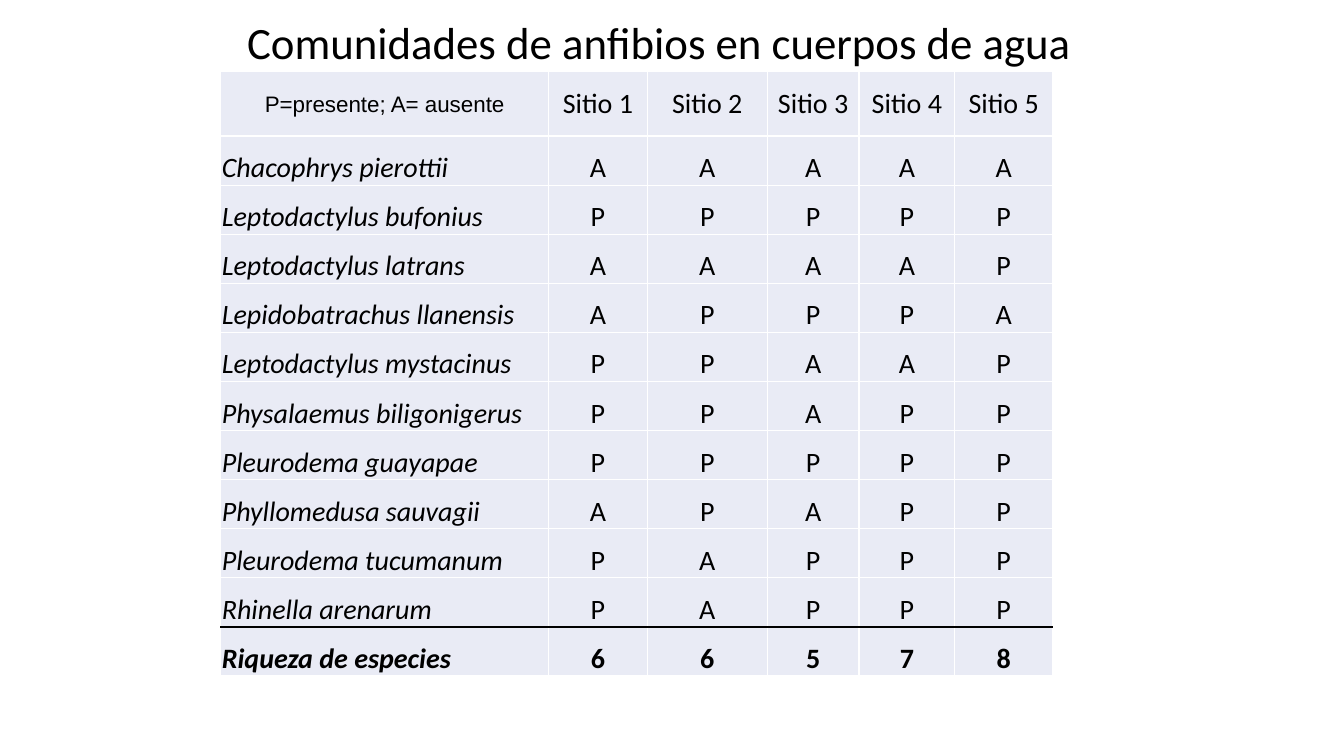
from dataclasses import dataclass

from lxml.etree import SubElement
from pptx import Presentation
from pptx.dml.color import RGBColor as Rgb
from pptx.enum.text import MSO_ANCHOR as Anchor, MSO_AUTO_SIZE as Fit, PP_ALIGN as Align
from pptx.oxml.ns import qn
from pptx.util import Inches, Pt


@dataclass(frozen=True)
class Theme:
    ink: str = "000000"
    rule: str = "FFFFFF"
    fill: str = "E9EBF5"
    face: str = "Calibri"
    key_face: str = "Arial"
    title: int = 32
    body: int = 20
    key: int = 16


THEME = Theme()
TITLE = "Comunidades de anfibios en cuerpos de agua"
KEY = "P=presente; A= ausente"
SITES = [f"Sitio {n}" for n in range(1, 6)]
SPECIES = {
    "Chacophrys pierottii": "AAAAA",
    "Leptodactylus bufonius": "PPPPP",
    "Leptodactylus latrans": "AAAAP",
    "Lepidobatrachus llanensis": "APPPA",
    "Leptodactylus mystacinus": "PPAAP",
    "Physalaemus biligonigerus": "PPAPP",
    "Pleurodema guayapae": "PPPPP",
    "Phyllomedusa sauvagii": "APAPP",
    "Pleurodema tucumanum": "PAPPP",
    "Rhinella arenarum": "PAPPP",
}
TOTAL = ["Riqueza de especies", *"66578"]
WIDTHS = [3.25, 0.98, 1.19, 0.91, 0.95, 0.97]
HEAD = 0.64


def style(para, size, face=THEME.face, bold=False, italic=False):
    font = para.font
    font.name, font.size = face, Pt(size)
    font.bold, font.italic = bold, italic
    font.color.rgb = Rgb.from_string(THEME.ink)


def add_title(slide, left, top, width, height):
    title = slide.shapes.title
    title.left, title.top = Inches(left), Inches(top)
    title.width, title.height = Inches(width), Inches(height)
    frame = title.text_frame
    frame.text = TITLE
    frame.word_wrap, frame.auto_size = True, Fit.NONE
    frame.vertical_anchor = Anchor.MIDDLE
    para = frame.paragraphs[0]
    para.alignment, para.line_spacing = Align.LEFT, 0.9
    style(para, THEME.title)


def add_edges(cell, **colors):
    """Draw the four cell borders; colors overrides sides L, R, T, B."""
    props = cell._tc.get_or_add_tcPr()
    for side in "LRTB":
        line = SubElement(props, qn(f"a:ln{side}"), w=str(Pt(1)))
        paint = SubElement(line, qn("a:solidFill"))
        SubElement(paint, qn("a:srgbClr"), val=colors.get(side, THEME.rule))


def fill_cell(cell, text, row, col, last):
    edges = {last - 1: {"B": THEME.ink}, last: {"T": THEME.ink}}
    add_edges(cell, **edges.get(row, {}))
    cell.fill.solid()
    cell.fill.fore_color.rgb = Rgb.from_string(THEME.fill)
    cell.margin_left = cell.margin_right = cell.margin_top = Inches(0.01)
    cell.margin_bottom = 0
    cell.vertical_anchor = Anchor.BOTTOM if row else Anchor.MIDDLE
    cell.text = text
    para = cell.text_frame.paragraphs[0]
    name = row > 0 and col == 0
    para.alignment = Align.LEFT if name else Align.CENTER
    if row == col == 0:
        style(para, THEME.key, THEME.key_face)
    else:
        style(para, THEME.body, bold=row == last, italic=name)


def add_grid(slide, left, top, width, height):
    rows = [[KEY, *SITES], *([name, *marks] for name, marks in SPECIES.items()), TOTAL]
    last = len(rows) - 1
    table = slide.shapes.add_table(
        len(rows), len(WIDTHS), Inches(left), Inches(top), Inches(width), Inches(height)
    ).table
    table.first_row = table.horz_banding = False
    for column, size in zip(table.columns, WIDTHS):
        column.width = Inches(size * width / sum(WIDTHS))
    for r, texts in enumerate(rows):
        table.rows[r].height = Inches((height - HEAD) / last if r else HEAD)
        for c, text in enumerate(texts):
            fill_cell(table.cell(r, c), text, r, c, last)


def main():
    deck = Presentation()
    deck.slide_width, deck.slide_height = Inches(13.33), Inches(7.5)
    slide = deck.slides.add_slide(deck.slide_layouts[5])
    add_title(slide, 2.35, -0.28, 8.62, 1.45)
    add_grid(slide, 2.19, 0.71, 8.25, 6)
    deck.save("out.pptx")


if __name__ == "__main__":
    main()
